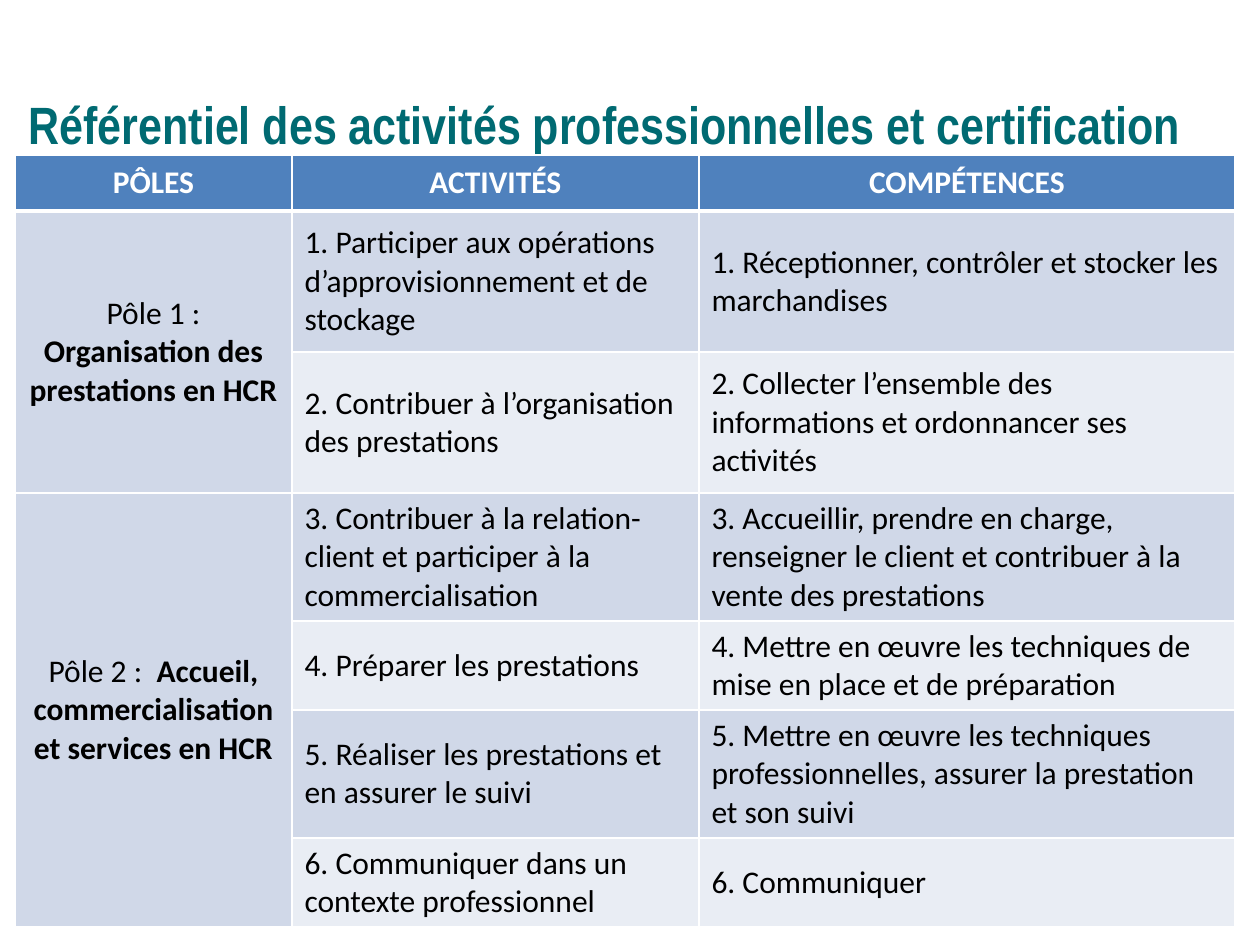
from pptx import Presentation
from pptx.dml.color import RGBColor
from pptx.enum.text import MSO_ANCHOR, PP_ALIGN
from pptx.oxml import parse_xml
from pptx.oxml.ns import nsdecls
from pptx.util import Pt

# Content
TITLE = "Référentiel des activités professionnelles et certification"
HEADERS = ["PÔLES", "ACTIVITÉS", "COMPÉTENCES"]
POLES = [
    ("Pôle 1 : ", "Organisation des prestations en HCR", [
        ("1. Participer aux opérations d’approvisionnement et de stockage",
         "1. Réceptionner, contrôler et stocker les marchandises"),
        ("2. Contribuer à l’organisation des prestations",
         "2. Collecter l’ensemble des informations et ordonnancer ses activités"),
    ]),
    ("Pôle 2 :  ", "Accueil, commercialisation et services en HCR", [
        ("3. Contribuer à la relation-client et participer à la commercialisation",
         "3. Accueillir, prendre en charge, renseigner le client et contribuer "
         "à la vente des prestations"),
        ("4. Préparer les prestations",
         "4. Mettre en œuvre les techniques de mise en place et de préparation"),
        ("5. Réaliser les prestations et en assurer le suivi",
         "5. Mettre en œuvre les techniques professionnelles, assurer la "
         "prestation et son suivi"),
        ("6. Communiquer dans un contexte professionnel",
         "6. Communiquer"),
    ]),
]

COLORS = {"title": "006A72", "header": "4F81BD", "odd": "D0D8E8",
          "even": "E9EDF4", "white": "FFFFFF", "black": "000000"}

# Layout in px, 126 to the inch
COL_WIDTHS = [277, 407, 536]
ROW_HEIGHTS = [56, 141, 141, 128, 89, 128, 89]


def px(n):
    return round(n * 914400 / 126)


def write(frame, *runs, size=18, font="Calibri", color="black",
          align=PP_ALIGN.LEFT, spacing=None):
    """Fill a text frame with one paragraph of (text, bold) runs."""
    paragraph = frame.paragraphs[0]
    paragraph.alignment = align
    if spacing:
        paragraph.line_spacing = Pt(spacing)
    for text, bold in runs:
        run = paragraph.add_run()
        run.text = text
        run.font.size = Pt(size)
        run.font.name = font
        run.font.bold = bold
        run.font.color.rgb = RGBColor.from_string(COLORS[color])


def style(cell, fill, bottom=1):
    """Set a cell's fill, anchor and white borders."""
    cell.fill.solid()
    cell.fill.fore_color.rgb = RGBColor.from_string(COLORS[fill])
    cell.vertical_anchor = MSO_ANCHOR.MIDDLE
    borders = {"lnL": 1, "lnR": 1, "lnT": 1, "lnB": bottom}
    for i, (side, width) in enumerate(borders.items()):
        cell._tc.get_or_add_tcPr().insert(i, parse_xml(
            f'<a:{side} {nsdecls("a")} w="{Pt(width)}"><a:solidFill>'
            f'<a:srgbClr val="{COLORS["white"]}"/></a:solidFill></a:{side}>'))


prs = Presentation()
prs.slide_width, prs.slide_height = px(1260), px(945)
slide = prs.slides.add_slide(prs.slide_layouts[6])

# Title
title = slide.shapes.add_textbox(px(0), px(55), px(1211), px(142)).text_frame
title.word_wrap = True
title.vertical_anchor = MSO_ANCHOR.MIDDLE
title.margin_top = title.margin_bottom = 0
write(title, (TITLE, True), size=30, font="Arial Narrow", color="title",
      align=PP_ALIGN.CENTER, spacing=33)

# Table grid
table = slide.shapes.add_table(
    len(ROW_HEIGHTS), len(COL_WIDTHS), px(15), px(155),
    px(sum(COL_WIDTHS)), px(sum(ROW_HEIGHTS))).table
for column, width in zip(table.columns, COL_WIDTHS):
    column.width = px(width)
for row, height in zip(table.rows, ROW_HEIGHTS):
    row.height = px(height)

# Header row
for col, header in enumerate(HEADERS):
    cell = table.cell(0, col)
    style(cell, "header", bottom=3)
    write(cell.text_frame, (header, True), color="white", align=PP_ALIGN.CENTER)

# One merged cell per pole, one row per activity
first = 1
for label, name, activities in POLES:
    pole = table.cell(first, 0)
    pole.merge(table.cell(first + len(activities) - 1, 0))
    write(pole.text_frame, (label, False), (name, True), align=PP_ALIGN.CENTER)
    for r, pair in enumerate(activities, first):
        style(table.cell(r, 0), "odd")
        for col, text in enumerate(pair, 1):
            cell = table.cell(r, col)
            style(cell, "odd" if r % 2 else "even")
            write(cell.text_frame, (text, False))
    first += len(activities)

prs.save("out.pptx")
